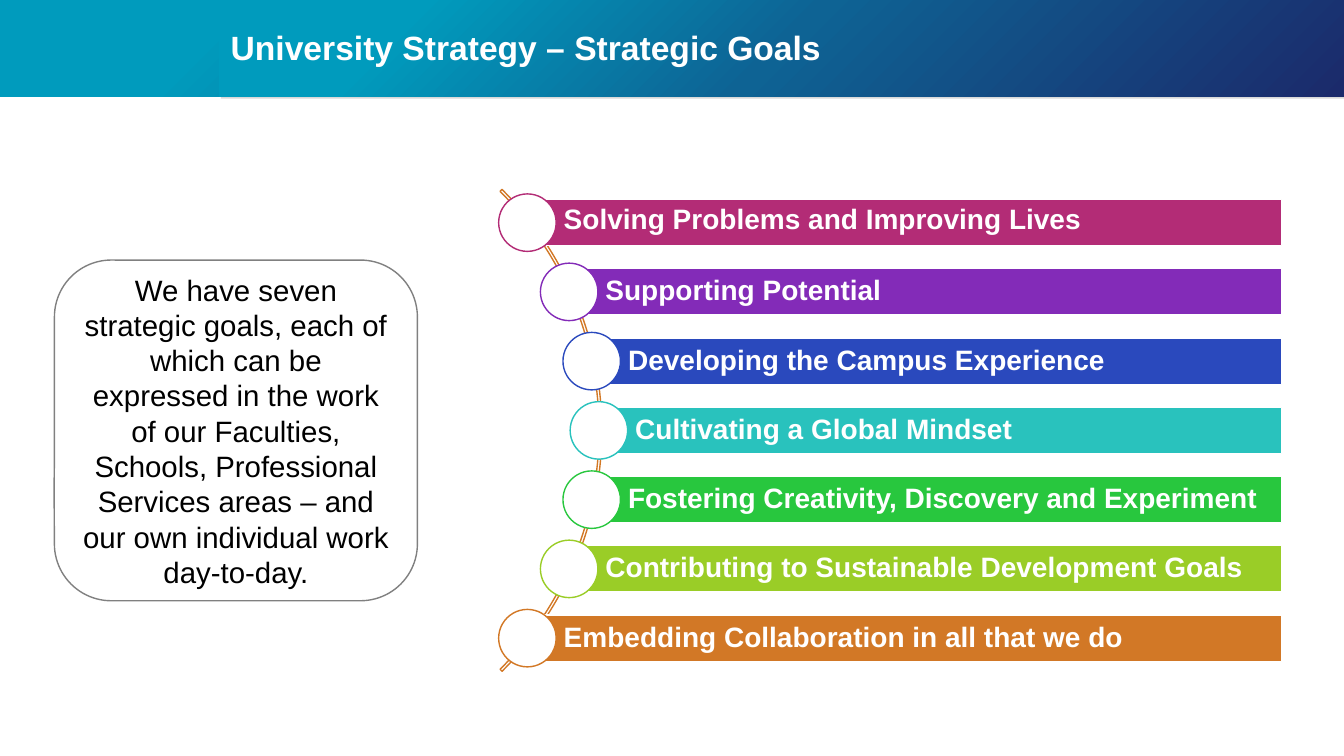
from copy import deepcopy
from dataclasses import dataclass
from math import sqrt

from pptx import Presentation
from pptx.dml.color import RGBColor
from pptx.enum.shapes import MSO_SHAPE as Shape
from pptx.enum.text import MSO_ANCHOR as Anchor, PP_ALIGN as Align
from pptx.oxml.ns import qn
from pptx.util import Inches, Pt


@dataclass(frozen=True)
class Theme:
    """Colours, font and type sizes of the slide."""
    font: str = "Arial"
    white: str = "FFFFFF"
    black: str = "000000"
    edge: str = "D9D9D9"
    outline: str = "808080"
    arc: str = "D27826"
    gradient: tuple = ((0.17, "009BBD"), (0.5, "0E6394"), (1, "1B2A6B"))
    title_size: int = 24
    goal_size: int = 20
    intro_size: int = 21


THEME = Theme()
GOALS = [
    ("Solving Problems and Improving Lives", "B32C76"),
    ("Supporting Potential", "832BB8"),
    ("Developing the Campus Experience", "2A49BD"),
    ("Cultivating a Global Mindset", "29C2BD"),
    ("Fostering Creativity, Discovery and Experiment", "28C73E"),
    ("Contributing to Sustainable Development Goals", "9ACD27"),
    ("Embedding Collaboration in all that we do", "D27826"),
]
INTRO = ("We have seven strategic goals, each of which can be expressed in the work "
         "of our Faculties, Schools, Professional Services areas – and our own "
         "individual work day-to-day.")


def apply(target, values):
    """Set every attribute of target named in values."""
    for name, value in values.items():
        setattr(target, name, value)


def add_box(page, kind, box, fill=None, line=None, adjust=()):
    """Add a preset shape with a plain fill and outline."""
    shape = page.shapes.add_shape(kind, *map(Inches, box))
    shape.shadow.inherit = False
    for index, value in enumerate(adjust):
        shape.adjustments[index] = value
    if fill:
        shape.fill.solid()
        shape.fill.fore_color.rgb = RGBColor.from_string(fill)
    else:
        shape.fill.background()
    if line:
        shape.line.color.rgb = RGBColor.from_string(line)
        shape.line.width = Pt(1)
    else:
        shape.line.fill.background()
    return shape


def write(shape, text, size, color, frame_format, para_format, bold=False):
    """Write one formatted paragraph into a shape."""
    frame = shape.text_frame
    apply(frame, {"word_wrap": True, **frame_format})
    para = frame.paragraphs[0]
    apply(para, para_format)
    span = para.add_run()
    span.text = text
    apply(span.font, {"name": THEME.font, "size": Pt(size), "bold": bold})
    span.font.color.rgb = RGBColor.from_string(color)


def add_gradient_band(page, box):
    """Add a band shaded diagonally through the theme gradient."""
    band = add_box(page, Shape.RECTANGLE, box)
    band.fill.gradient()
    band.fill.gradient_angle = 315
    stop_list = next(band._element.iter(qn("a:gsLst")))
    stop_list.append(deepcopy(stop_list[0]))
    for stop, (position, color) in zip(band.fill.gradient_stops, THEME.gradient):
        stop.position = position
        stop.color.rgb = RGBColor.from_string(color)


def add_header(page, box, title):
    """Draw the header bands and the title over them."""
    left, top, width, height = box
    indent = 2.17
    add_gradient_band(page, box)
    add_box(page, Shape.RECTANGLE,
            (left + indent + 0.02, top + 0.02, width - indent - 0.02, height), THEME.edge)
    add_gradient_band(page, (left + indent, top, width - indent, height))
    heading = page.shapes.add_textbox(
        *map(Inches, (left + indent + 0.02, top + 0.13, width - indent - 0.02, 0.76)))
    write(heading, title, THEME.title_size, THEME.white,
          {"vertical_anchor": Anchor.MIDDLE}, {"line_spacing": 0.9}, bold=True)


def add_intro(page, box, text):
    """Draw the outlined callout with the introduction."""
    callout = add_box(page, Shape.ROUNDED_RECTANGULAR_CALLOUT, box,
                      line=THEME.outline, adjust=(-0.501, 0.17, 0.167))
    write(callout, text, THEME.intro_size, THEME.black,
          {"vertical_anchor": Anchor.MIDDLE}, {"alignment": Align.CENTER})


def add_goals(page, box, goals):
    """Place goal bars and their circles along an arc filling the box height."""
    left, top, width, height = box
    pitch, bar_height, circle, radius = 0.687, 0.46, 0.57, 3.35
    center_x, center_y = left, top + height / 2
    add_box(page, Shape.BLOCK_ARC, (left - height / 2, top, height, height),
            line=THEME.arc, adjust=(189, 27, 0.004))
    for index, (text, color) in enumerate(goals):
        offset = (index - (len(goals) - 1) / 2) * pitch
        x = center_x + sqrt(radius ** 2 - offset ** 2)
        y = center_y + offset
        bar = add_box(page, Shape.RECTANGLE,
                      (x, y - bar_height / 2, left + width - x, bar_height),
                      color, THEME.white)
        frame_format = {
            "vertical_anchor": Anchor.MIDDLE if index else Anchor.TOP,
            "margin_left": Inches(0.36),
            "margin_top": Inches(0.06),
            "margin_right": Inches(0.06),
            "margin_bottom": Inches(0.06),
        }
        write(bar, text, THEME.goal_size, THEME.white, frame_format,
              {"alignment": Align.LEFT, "line_spacing": 0.9}, bold=True)
        add_box(page, Shape.OVAL, (x - circle / 2, y - circle / 2, circle, circle),
                THEME.white, color)


def main():
    """Build and save the strategic goals slide."""
    deck = Presentation()
    apply(deck, {"slide_width": Inches(13.33), "slide_height": Inches(7.5)})
    page = deck.slides.add_slide(deck.slide_layouts[6])
    add_header(page, (0, -0.02, 13.33, 0.98), "University Strategy – Strategic Goals")
    add_goals(page, (2.59, 0.89, 10.12, 6.76), GOALS)
    add_intro(page, (0.54, 2.58, 3.6, 3.38), INTRO)
    deck.save("out.pptx")


if __name__ == "__main__":
    main()
